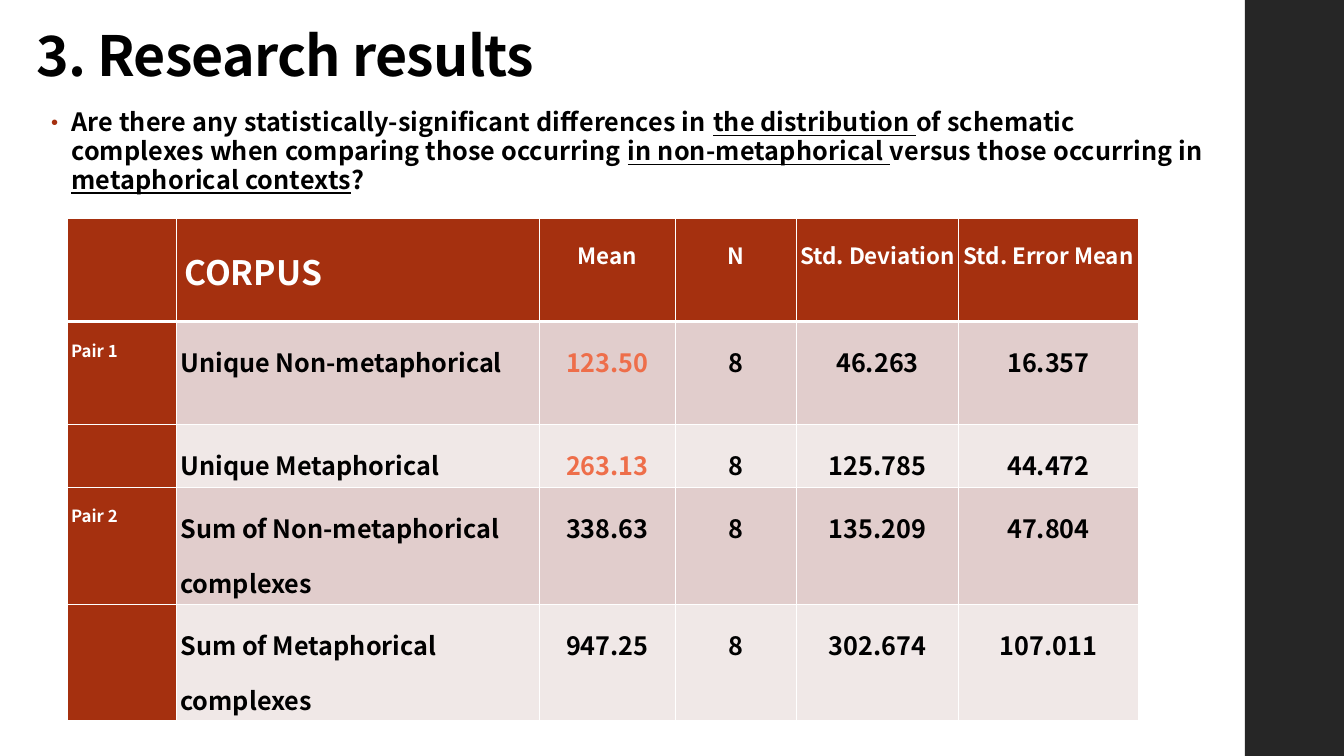
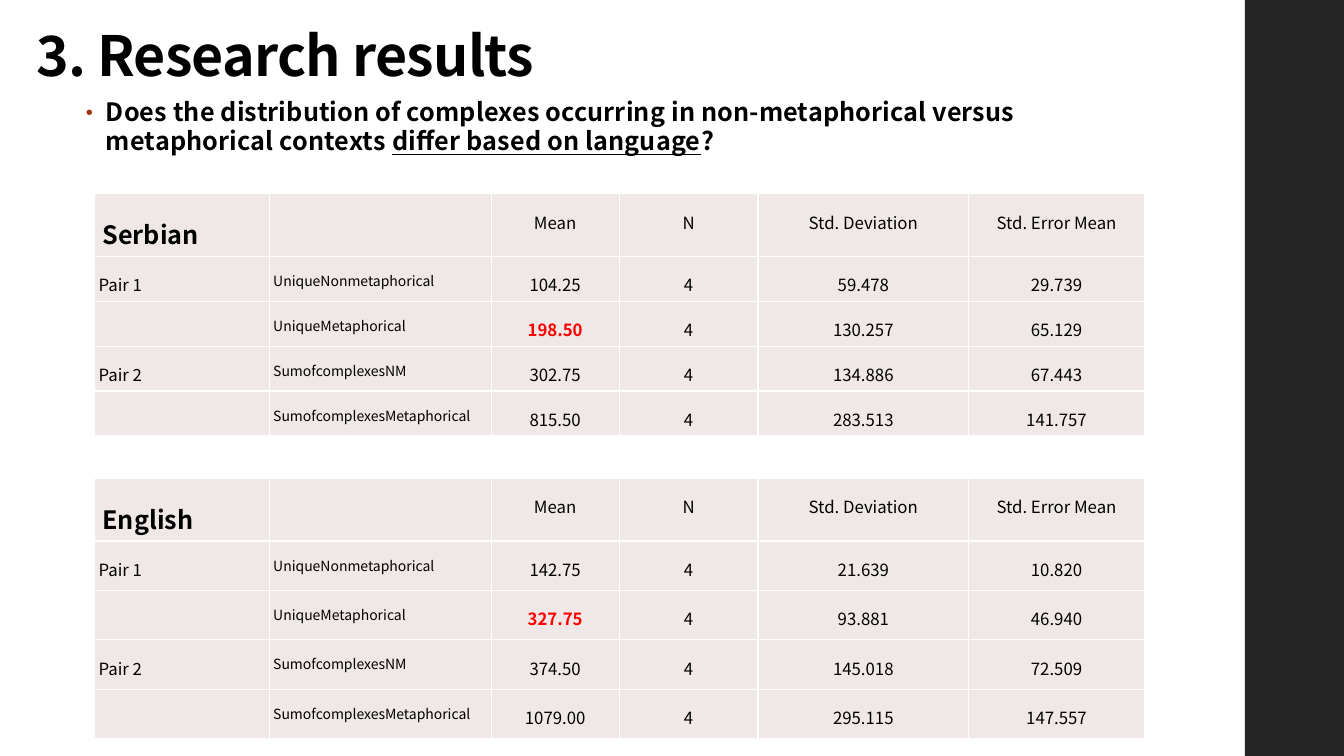
from dataclasses import dataclass

import pptx
import pptx.dml.color
import pptx.enum.shapes
import pptx.enum.text
import pptx.oxml
import pptx.oxml.ns
import pptx.util

Pt = pptx.util.Pt
Align = pptx.enum.text.PP_ALIGN
Anchor = pptx.enum.text.MSO_ANCHOR

FONT = "Noto Sans CJK KR"
COLORS = {
    "white": "FFFFFF",
    "black": "000000",
    "band": "262626",
    "rust": "A5300F",
    "rose": "E1CDCC",
    "pale": "F0E8E7",
    "coral": "EE6E4A",
    "red": "FF0000",
}
SLIDE_WIDTH, SLIDE_HEIGHT = 960, 540
BAND_LEFT = 889.2
CELL_MARGIN = 2.7
HEADING_MARGIN = 5.5
STATISTICS = ["Mean", "N", "Std. Deviation", "Std. Error Mean"]
LANGUAGE_COLUMNS = [124.8, 158.4, 91.4, 99.2, 150.5, 125.5]
LANGUAGE_MEASURES = [
    ("Pair 1", "UniqueNonmetaphorical"),
    ("", "UniqueMetaphorical"),
    ("Pair 2", "SumofcomplexesNM"),
    ("", "SumofcomplexesMetaphorical"),
]


@dataclass(frozen=True)
class Box:
    left: float
    top: float
    width: float
    height: float


@dataclass(frozen=True)
class TextStyle:
    size: float
    color: str = "black"
    bold: bool = False
    underline: bool = False
    spacing: float = 0


@dataclass(frozen=True)
class CellSpec:
    text: str
    style: TextStyle
    fill: str
    align: Align = Align.CENTER
    left_margin: float = CELL_MARGIN


@dataclass(frozen=True)
class TableSpec:
    left: float
    top: float
    columns: list[float]
    rows: list[float]
    cells: list[list[CellSpec]]
    header_rule: float = 1


TITLE = TextStyle(39.6, bold=True, spacing=-0.5)
QUESTION = TextStyle(18, bold=True, spacing=0.1)
UNDERLINED = TextStyle(18, bold=True, underline=True, spacing=0.1)


def rgb(name: str) -> pptx.dml.color.RGBColor:
    return pptx.dml.color.RGBColor.from_string(COLORS[name])


def add_run(paragraph, text: str, style: TextStyle) -> None:
    run = paragraph.add_run()
    run.text = text
    run.font.name = FONT
    run.font.size = Pt(style.size)
    run.font.bold = style.bold
    run.font.underline = style.underline
    run.font.color.rgb = rgb(style.color)
    properties = run._r.get_or_add_rPr()
    if style.spacing:
        properties.set("spc", str(round(style.spacing * 100)))
    east_asian = properties.makeelement(pptx.oxml.ns.qn("a:ea"), {"typeface": FONT})
    properties.append(east_asian)


def add_text_frame(slide, box: Box, anchor: Anchor):
    shape = slide.shapes.add_textbox(
        Pt(box.left), Pt(box.top), Pt(box.width), Pt(box.height)
    )
    shape.text_frame.word_wrap = True
    shape.text_frame.vertical_anchor = anchor
    return shape.text_frame


def add_bullet(paragraph) -> None:
    properties = paragraph._p.get_or_add_pPr()
    properties.set("marL", str(Pt(14.4)))
    properties.set("indent", str(Pt(-14.4)))
    namespace = pptx.oxml.ns.nsdecls("a")
    for fragment in (
        f'<a:buClr {namespace}><a:srgbClr val="{COLORS["rust"]}"/></a:buClr>',
        f'<a:buSzPct {namespace} val="80000"/>',
        f'<a:buFont {namespace} typeface="Arial"/>',
        f'<a:buChar {namespace} char="•"/>',
    ):
        properties.append(pptx.oxml.parse_xml(fragment))


def add_base_slide(presentation):
    slide = presentation.slides.add_slide(presentation.slide_layouts[6])
    band = slide.shapes.add_shape(
        pptx.enum.shapes.MSO_SHAPE.RECTANGLE,
        Pt(BAND_LEFT), Pt(0), Pt(SLIDE_WIDTH - BAND_LEFT), Pt(SLIDE_HEIGHT),
    )
    band.shadow.inherit = False
    band.fill.solid()
    band.fill.fore_color.rgb = rgb("band")
    band.line.fill.background()
    frame = add_text_frame(slide, Box(18.7, 20.2, 838, 46.8), Anchor.BOTTOM)
    paragraph = frame.paragraphs[0]
    paragraph.line_spacing = 0.9
    add_run(paragraph, "3. Research results", TITLE)
    return slide


def add_question(slide, box: Box, parts: list[tuple[str, TextStyle]]) -> None:
    paragraph = add_text_frame(slide, box, Anchor.TOP).paragraphs[0]
    paragraph.line_spacing = 0.95
    paragraph.space_before = Pt(14)
    paragraph.space_after = Pt(2)
    add_bullet(paragraph)
    for text, style in parts:
        add_run(paragraph, text, style)


def set_borders(cell, top: float, bottom: float) -> None:
    properties = cell._tc.get_or_add_tcPr()
    namespace = pptx.oxml.ns.nsdecls("a")
    for side, width in (("L", 1), ("R", 1), ("T", top), ("B", bottom)):
        properties.append(pptx.oxml.parse_xml(
            f'<a:ln{side} {namespace} w="{Pt(width)}"><a:solidFill>'
            f'<a:srgbClr val="{COLORS["white"]}"/></a:solidFill></a:ln{side}>'
        ))


def fill_cell(cell, spec: CellSpec) -> None:
    cell.fill.solid()
    cell.fill.fore_color.rgb = rgb(spec.fill)
    cell.vertical_anchor = Anchor.TOP
    cell.margin_left = Pt(spec.left_margin)
    cell.margin_right = cell.margin_top = cell.margin_bottom = Pt(CELL_MARGIN)
    if spec.text:
        paragraph = cell.text_frame.paragraphs[0]
        paragraph.alignment = spec.align
        paragraph.line_spacing = 1.5
        add_run(paragraph, spec.text, spec.style)


def add_table(slide, spec: TableSpec) -> None:
    table = slide.shapes.add_table(
        len(spec.rows), len(spec.columns), Pt(spec.left), Pt(spec.top),
        Pt(sum(spec.columns)), Pt(sum(spec.rows)),
    ).table
    table.first_row = False
    table.horz_banding = False
    for column, width in zip(table.columns, spec.columns):
        column.width = Pt(width)
    for row, height in zip(table.rows, spec.rows):
        row.height = Pt(height)
    for row_index, row_cells in enumerate(spec.cells):
        top = spec.header_rule if row_index == 1 else 1
        bottom = spec.header_rule if row_index == 0 else 1
        for column_index, cell_spec in enumerate(row_cells):
            cell = table.cell(row_index, column_index)
            set_borders(cell, top, bottom)
            fill_cell(cell, cell_spec)


def corpus_table() -> TableSpec:
    label = TextStyle(12, "white", bold=True)
    heading = TextStyle(16, "white", bold=True)
    body = TextStyle(18, bold=True)
    accent = TextStyle(18, "coral", bold=True)
    measures = [
        ("Pair 1", "Unique Non-metaphorical", "123.50", "46.263", "16.357"),
        ("", "Unique Metaphorical", "263.13", "125.785", "44.472"),
        ("Pair 2", "Sum of Non-metaphorical complexes", "338.63", "135.209", "47.804"),
        ("", "Sum of Metaphorical complexes", "947.25", "302.674", "107.011"),
    ]
    cells = [[
        CellSpec("", label, "rust"),
        CellSpec("CORPUS", TextStyle(24, "white", bold=True), "rust",
                 Align.LEFT, HEADING_MARGIN),
        *(CellSpec(name, heading, "rust") for name in STATISTICS),
    ]]
    for index, (pair, name, mean, deviation, error) in enumerate(measures):
        fill = "pale" if index % 2 else "rose"
        cells.append([
            CellSpec(pair, label, "rust", Align.LEFT),
            CellSpec(name, body, fill, Align.LEFT),
            CellSpec(mean, accent if name.startswith("Unique") else body, fill),
            *(CellSpec(value, body, fill) for value in ("8", deviation, error)),
        ])
    return TableSpec(48.2, 156.3, [78, 259, 97.3, 86.4, 116, 128.2],
                     [73.4, 73.4, 45, 83.5, 83.5], cells, header_rule=3)


def language_table(
    language: str, top: float, row_height: float,
    values: list[tuple[str, str, str]],
) -> TableSpec:
    body = TextStyle(12)
    small = TextStyle(10)
    accent = TextStyle(12, "red", bold=True)
    cells = [[
        CellSpec(language, TextStyle(18, bold=True), "pale",
                 Align.JUSTIFY, HEADING_MARGIN),
        CellSpec("", body, "pale"),
        *(CellSpec(name, body, "pale") for name in STATISTICS),
    ]]
    for (pair, name), (mean, deviation, error) in zip(LANGUAGE_MEASURES, values):
        mean_style = accent if name == "UniqueMetaphorical" else body
        cells.append([
            CellSpec(pair, body, "pale", Align.JUSTIFY),
            CellSpec(name, small, "pale", Align.JUSTIFY),
            CellSpec(mean, mean_style, "pale"),
            *(CellSpec(value, body, "pale") for value in ("4", deviation, error)),
        ])
    rows = [44.7] + [row_height] * len(values)
    return TableSpec(67.7, top, LANGUAGE_COLUMNS, rows, cells)


def main() -> None:
    presentation = pptx.Presentation()
    presentation.slide_width = Pt(SLIDE_WIDTH)
    presentation.slide_height = Pt(SLIDE_HEIGHT)

    corpus_slide = add_base_slide(presentation)
    add_question(corpus_slide, Box(29.5, 74.2, 840, 437), [
        ("Are there any statistically-significant differences in ", QUESTION),
        ("the distribution ", UNDERLINED),
        ("of schematic complexes when comparing those occurring ", QUESTION),
        ("in non-metaphorical ", UNDERLINED),
        ("versus those occurring in ", QUESTION),
        ("metaphorical contexts", UNDERLINED),
        ("?", QUESTION),
    ])
    add_table(corpus_slide, corpus_table())

    language_slide = add_base_slide(presentation)
    add_question(language_slide, Box(54.2, 67, 749.5, 419.8), [
        ("Does the distribution of complexes occurring in non-metaphorical "
         "versus metaphorical contexts ", QUESTION),
        ("differ based on language", UNDERLINED),
        ("?", QUESTION),
    ])
    add_table(language_slide, language_table("Serbian", 138.4, 32.1, [
        ("104.25", "59.478", "29.739"),
        ("198.50", "130.257", "65.129"),
        ("302.75", "134.886", "67.443"),
        ("815.50", "283.513", "141.757"),
    ]))
    add_table(language_slide, language_table("English", 341.8, 35.3, [
        ("142.75", "21.639", "10.820"),
        ("327.75", "93.881", "46.940"),
        ("374.50", "145.018", "72.509"),
        ("1079.00", "295.115", "147.557"),
    ]))
    presentation.save("out.pptx")


if __name__ == "__main__":
    main()
